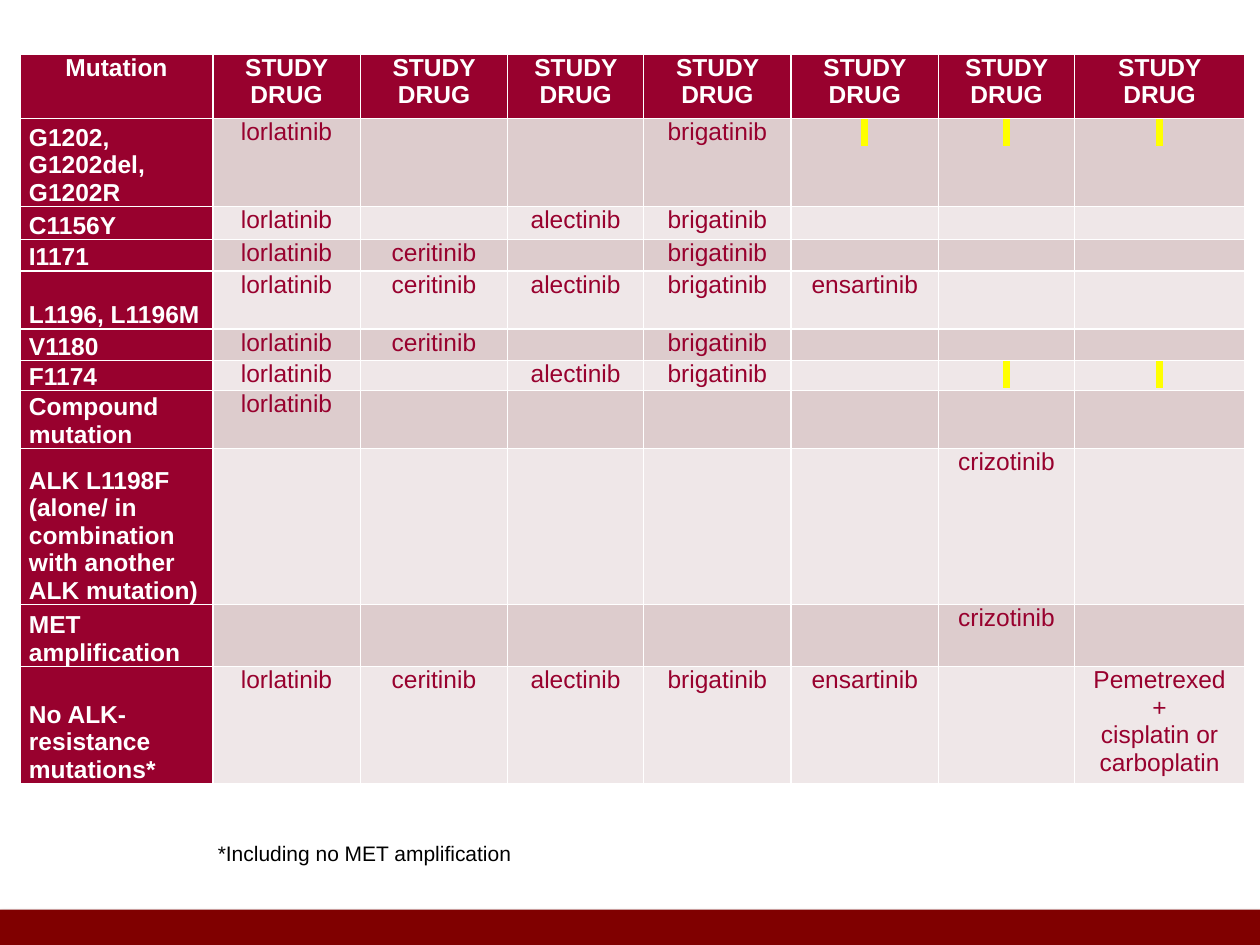
from lxml import etree
from pptx import Presentation
from pptx.dml.color import RGBColor
from pptx.enum import shapes, text
from pptx.oxml import ns
from pptx.util import Inches, Pt

WINE, WHITE, BLACK, MAROON, YELLOW = "98012E", "FFFFFF", "000000", "800000", "FFFF00"
BANDS = ["DDCCCD", "EFE7E8"]
MARK = " "  # a highlighted space
LOR, CER, ALE, BRI, ENS, CRI = (
    "lorlatinib", "ceritinib", "alectinib", "brigatinib", "ensartinib", "crizotinib")
CHEMO = "Pemetrexed\n+\ncisplatin or carboplatin"

WIDTHS = [1.53, 1.17, 1.17, 1.08, 1.17, 1.17, 1.08, 1.35]
HEAD = ["Mutation"] + ["STUDY DRUG"] * 7
# height, mutation, drugs by column number
ROWS = [
    (0.7, "G1202, G1202del, G1202R", {1: LOR, 4: BRI, 5: MARK, 6: MARK, 7: MARK}),
    (0.26, "C1156Y", {1: LOR, 3: ALE, 4: BRI}),
    (0.25, "I1171", {1: LOR, 2: CER, 4: BRI}),
    (0.46, "L1196, L1196M", {1: LOR, 2: CER, 3: ALE, 4: BRI, 5: ENS}),
    (0.25, "V1180", {1: LOR, 2: CER, 4: BRI}),
    (0.24, "F1174", {1: LOR, 3: ALE, 4: BRI, 6: MARK, 7: MARK}),
    (0.46, "Compound mutation", {1: LOR}),
    (1.24, "ALK L1198F (alone/ in combination with another ALK mutation)", {6: CRI}),
    (0.49, "MET amplification", {6: CRI}),
    (0.93, "No ALK-resistance mutations*", {1: LOR, 2: CER, 3: ALE, 4: BRI, 5: ENS, 7: CHEMO}),
]
HEIGHTS = [0.51] + [row[0] for row in ROWS]


def color(code):
    return RGBColor.from_string(code)


def sub(parent, tag, **attrs):
    """Append a DrawingML element."""
    return etree.SubElement(parent, ns.qn("a:" + tag), attrs)


def style(para, size, code, bold=False):
    font = para.font
    font.name, font.size, font.bold = "Arial", Pt(size), bold
    font.color.rgb = color(code)


def put(cell, words, fill, ink, bold=False, label=False):
    """Fill one table cell; a label sits at the bottom left."""
    cell.fill.solid()
    cell.fill.fore_color.rgb = color(fill)
    cell.margin_left = cell.margin_right = Inches(0.07)
    cell.margin_top = cell.margin_bottom = 0
    cell.vertical_anchor = text.MSO_ANCHOR.BOTTOM if label else text.MSO_ANCHOR.TOP
    cell.text = words
    for para in cell.text_frame.paragraphs:
        para.alignment = text.PP_ALIGN.LEFT if label else text.PP_ALIGN.CENTER
        style(para, 14, ink, bold)
        if not words:
            sub(para._p, "endParaRPr", sz="1400")
        if words == MARK:
            props = para.runs[0]._r.get_or_add_rPr()
            sub(sub(props, "highlight"), "srgbClr", val=YELLOW)


def add_bar(slide):
    bar = slide.shapes.add_shape(
        shapes.MSO_SHAPE.RECTANGLE, 0, Inches(7.22), Inches(10), Inches(0.28))
    bar.fill.solid()
    bar.fill.fore_color.rgb = color(MAROON)
    bar.line.fill.background()
    effects = sub(bar._element.spPr, "effectLst")
    shadow = sub(effects, "outerShdw", blurRad=str(Pt(3.1)), dist=str(Pt(1.8)),
                 dir="5400000", rotWithShape="0")
    sub(sub(shadow, "srgbClr", val=BLACK), "alpha", val="35000")


def add_grid(slide):
    grid = slide.shapes.add_table(
        len(HEIGHTS), len(WIDTHS), Inches(0.16), Inches(0.43),
        Inches(sum(WIDTHS)), Inches(sum(HEIGHTS))).table
    grid.horz_banding = False
    for col, width in zip(grid.columns, WIDTHS):
        col.width = Inches(width)
    for row, height in zip(grid.rows, HEIGHTS):
        row.height = Inches(height)
    for c, words in enumerate(HEAD):
        put(grid.cell(0, c), words, WINE, WHITE, bold=True)
    for r, (_, name, drugs) in enumerate(ROWS, 1):
        put(grid.cell(r, 0), name, WINE, WHITE, bold=True, label=True)
        for c in range(1, len(WIDTHS)):
            put(grid.cell(r, c), drugs.get(c, ""), BANDS[(r - 1) % 2], WINE)


def add_note(slide):
    frame = slide.shapes.add_textbox(
        Inches(1.63), Inches(6.62), Inches(8.25), Inches(0.3)).text_frame
    frame.word_wrap = True
    frame.vertical_anchor = text.MSO_ANCHOR.MIDDLE
    frame.text = "*Including no MET amplification"
    style(frame.paragraphs[0], 12, BLACK)


def main():
    deck = Presentation()
    deck.slide_width, deck.slide_height = Inches(10), Inches(7.5)
    slide = deck.slides.add_slide(deck.slide_layouts[6])
    add_bar(slide)
    add_grid(slide)
    add_note(slide)
    deck.save("out.pptx")


if __name__ == "__main__":
    main()
